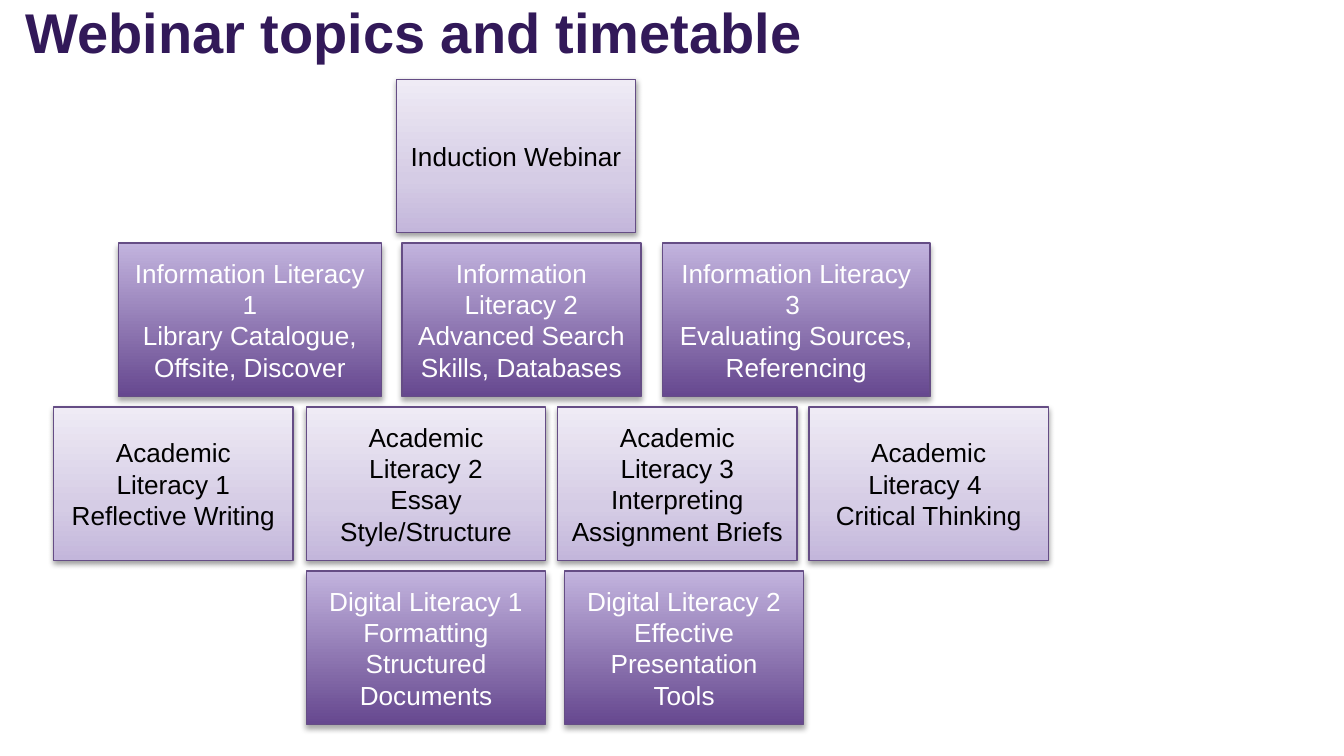
from pptx import Presentation
from pptx import util as u
from pptx.dml.color import RGBColor
from pptx.enum import shapes, text
from pptx.oxml import parse_xml
from pptx.oxml.ns import nsdecls, qn


def set_color(target, value):
    target.rgb = RGBColor.from_string(value)


def set_gradient_and_shadow(shape, stops, opacity, distance):
    stop_xml = "".join(
        f'<a:gs pos="{position * 1000}"><a:srgbClr val="{value}"/></a:gs>'
        for position, value in stops
    )
    gradient = parse_xml(
        f'<a:gradFill {nsdecls("a")} rotWithShape="1"><a:gsLst>{stop_xml}</a:gsLst>'
        '<a:lin ang="16200000" scaled="0"/></a:gradFill>'
    )
    shadow = parse_xml(
        f'<a:outerShdw {nsdecls("a")} blurRad="{u.Pt(3.1)}" dist="{u.Pt(distance)}" '
        'dir="5400000" rotWithShape="0"><a:srgbClr val="000000">'
        f'<a:alpha val="{opacity * 1000}"/></a:srgbClr></a:outerShdw>'
    )
    properties = shape.element.spPr
    properties.find(qn("a:ln")).addprevious(gradient)
    properties.find(qn("a:effectLst")).append(shadow)


LIGHT = ([(0, "C3B6DB"), (35, "D5CCE5"), (100, "EFEBF5")], 38, 1.6, "000000")
DARK = ([(0, "66488F"), (100, "C2B3DE")], 35, 1.8, "FFFFFF")
BOX_WIDTH, BOX_HEIGHT = 1.78, 1.14
FIRST_TOP, ROW_STEP = 0.59, 1.22
SLIDE_WIDTH = 10

rows = [
    (LIGHT, [(2.95, BOX_WIDTH, "Induction Webinar")]),
    (DARK, [
        (0.88, 1.96, "Information Literacy 1\nLibrary Catalogue, Offsite, Discover"),
        (2.99, BOX_WIDTH, "Information Literacy 2 Advanced Search Skills, Databases"),
        (4.93, 1.99, "Information Literacy 3 \nEvaluating Sources, Referencing"),
    ]),
    (LIGHT, [
        (0.4, BOX_WIDTH, "Academic Literacy 1\nReflective Writing"),
        (2.28, BOX_WIDTH, "Academic Literacy 2\nEssay Style/Structure"),
        (4.15, BOX_WIDTH, "Academic Literacy 3 Interpreting Assignment Briefs"),
        (6.02, BOX_WIDTH, "Academic Literacy 4 \nCritical Thinking"),
    ]),
    (DARK, [
        (2.28, BOX_WIDTH, "Digital Literacy 1\nFormatting Structured Documents"),
        (4.2, BOX_WIDTH, "Digital Literacy 2 Effective Presentation Tools"),
    ]),
]

presentation = Presentation()
presentation.slide_width = u.Inches(SLIDE_WIDTH)
presentation.slide_height = u.Inches(SLIDE_WIDTH * 9 / 16)
slide = presentation.slides.add_slide(presentation.slide_layouts[5])

title = slide.shapes.title
title.left, title.top = u.Inches(0.09), u.Inches(-0.12)
title.width, title.height = u.Inches(9.16), u.Inches(0.94)
frame = title.text_frame
frame.text = "Webinar topics and timetable"
frame.auto_size = text.MSO_AUTO_SIZE.NONE
frame.vertical_anchor = text.MSO_ANCHOR.TOP
frame.margin_left = frame.margin_right = u.Inches(0.1)
frame.margin_top = frame.margin_bottom = u.Inches(0.1)
heading = frame.paragraphs[0]
heading.alignment = text.PP_ALIGN.LEFT
heading_font = heading.runs[0].font
heading_font.name, heading_font.size, heading_font.bold = "Arial", u.Pt(30), True
set_color(heading_font.color, "321959")

for row, (tone, topics) in enumerate(rows):
    stops, opacity, distance, text_color = tone
    top = FIRST_TOP + row * ROW_STEP
    for left, width, topic in topics:
        box = slide.shapes.add_shape(
            shapes.MSO_SHAPE.RECTANGLE,
            u.Inches(left), u.Inches(top), u.Inches(width), u.Inches(BOX_HEIGHT),
        )
        set_color(box.line.color, "654D85")
        box.line.width = u.Pt(0.75)
        box.shadow.inherit = False
        set_gradient_and_shadow(box, stops, opacity, distance)
        box.text_frame.text = topic
        box.text_frame.word_wrap = True
        box.text_frame.vertical_anchor = text.MSO_ANCHOR.MIDDLE
        for paragraph in box.text_frame.paragraphs:
            paragraph.alignment = text.PP_ALIGN.CENTER
            font = paragraph.runs[0].font
            font.name, font.size = "Arial", u.Pt(14)
            set_color(font.color, text_color)

presentation.save("out.pptx")
